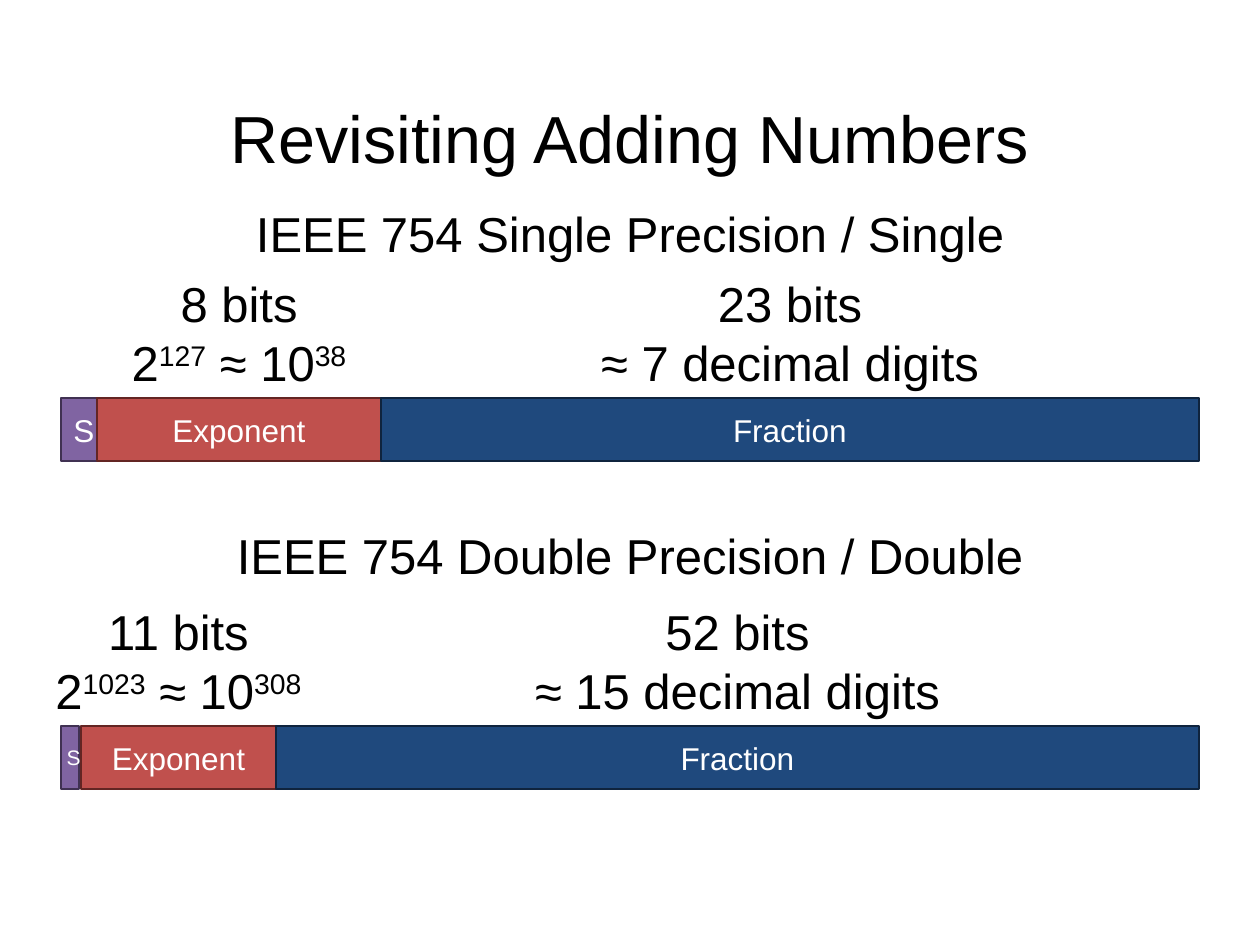
import pptx
import pptx.dml.color
import pptx.enum.shapes
import pptx.enum.text
import pptx.util

PX = 914400 // 126
COLORS = {
    "text": "000000", "white": "FFFFFF",
    "sign": "8064A2", "sign_line": "403152",
    "exponent": "C0504D", "exponent_line": "632523",
    "fraction": "1F497D", "fraction_line": "0F243E",
}
BAR_LEFT, BAR_WIDTH, BAR_HEIGHT = 61, 1138, 63
LABEL_HEIGHT, HEADING_HEIGHT = 131, 72


def rgb(name):
    return pptx.dml.color.RGBColor.from_string(COLORS[name])


def box(*lengths):
    return [pptx.util.Emu(length * PX) for length in lengths]


class NumberSlide:
    font = "Arial"

    def __init__(self, slide):
        self.slide = slide

    def add_lines(self, frame, lines, size, color, spacing=None):
        """Fill a frame with centred lines; every second run of a line is superscript."""
        frame.word_wrap = True
        for index, runs in enumerate(lines):
            paragraph = frame.paragraphs[0] if index == 0 else frame.add_paragraph()
            paragraph.alignment = pptx.enum.text.PP_ALIGN.CENTER
            if spacing:
                paragraph.line_spacing = spacing
            for position, text in enumerate(runs):
                run = paragraph.add_run()
                run.text = text
                run.font.name = self.font
                run.font.size = pptx.util.Pt(size)
                run.font.color.rgb = rgb(color)
                if position % 2:
                    run.font._element.set("baseline", "30000")

    def title(self, text):
        frame = self.slide.shapes.add_textbox(*box(87, 50, 1086, 183)).text_frame
        frame.vertical_anchor = pptx.enum.text.MSO_ANCHOR.MIDDLE
        self.add_lines(frame, [[text]], 38, "text", 0.9)

    def caption(self, left, top, width, height, lines):
        frame = self.slide.shapes.add_textbox(*box(left, top, width, height)).text_frame
        self.add_lines(frame, lines, 28, "text")
        frame.auto_size = pptx.enum.text.MSO_AUTO_SIZE.SHAPE_TO_FIT_TEXT

    def field(self, group, part, left, top, width, text, size):
        rectangle = group.shapes.add_shape(
            pptx.enum.shapes.MSO_SHAPE.RECTANGLE, *box(left, top, width, BAR_HEIGHT))
        rectangle.shadow.inherit = False
        rectangle.fill.solid()
        rectangle.fill.fore_color.rgb = rgb(part)
        rectangle.line.color.rgb = rgb(part + "_line")
        rectangle.line.width = pptx.util.Pt(1)
        rectangle.text_frame.vertical_anchor = pptx.enum.text.MSO_ANCHOR.MIDDLE
        self.add_lines(rectangle.text_frame, [[text]], size, "white")

    def number_format(self, heading, heading_top, bar_top, sign, exponent, fraction):
        """Draw a heading, the bit counts and the bar of one number format."""
        sign_width, sign_size = sign
        exponent_left, exponent_width, exponent_label, exponent_lines = exponent
        fraction_left, fraction_lines = fraction
        fraction_width = BAR_LEFT + BAR_WIDTH - fraction_left
        label_top = bar_top - LABEL_HEIGHT

        bar = self.slide.shapes.add_group_shape()
        self.field(bar, "sign", BAR_LEFT, bar_top, sign_width, "S", sign_size)
        self.field(bar, "exponent", exponent_left, bar_top, exponent_width, "Exponent", 18)
        self.field(bar, "fraction", fraction_left, bar_top, fraction_width, "Fraction", 18)

        label_left, label_width = exponent_label
        self.caption(label_left, label_top, label_width, LABEL_HEIGHT, exponent_lines)
        self.caption(fraction_left, label_top, fraction_width, LABEL_HEIGHT, fraction_lines)
        self.caption(BAR_LEFT, heading_top, BAR_WIDTH, HEADING_HEIGHT, [[heading]])


def main():
    deck = pptx.Presentation()
    deck.slide_width, deck.slide_height = pptx.util.Inches(10), pptx.util.Inches(7.5)
    page = NumberSlide(deck.slides.add_slide(deck.slide_layouts[6]))
    page.title("Revisiting Adding Numbers")
    page.number_format(
        "IEEE 754 Single Precision / Single", 197, 398,
        sign=(36, 18),
        exponent=(97, 284, (97, 284), [["8 bits"], ["2", "127", " ≈ 10", "38"]]),
        fraction=(381, [["23 bits"], ["≈ 7 decimal digits"]]))
    page.number_format(
        "IEEE 754 Double Precision / Double", 519, 726,
        sign=(18, 12),
        exponent=(81, 195, (28, 301), [["11 bits"], ["2", "1023", " ≈ 10", "308"]]),
        fraction=(276, [["52 bits"], ["≈ 15 decimal digits"]]))
    deck.save("out.pptx")


if __name__ == "__main__":
    main()
